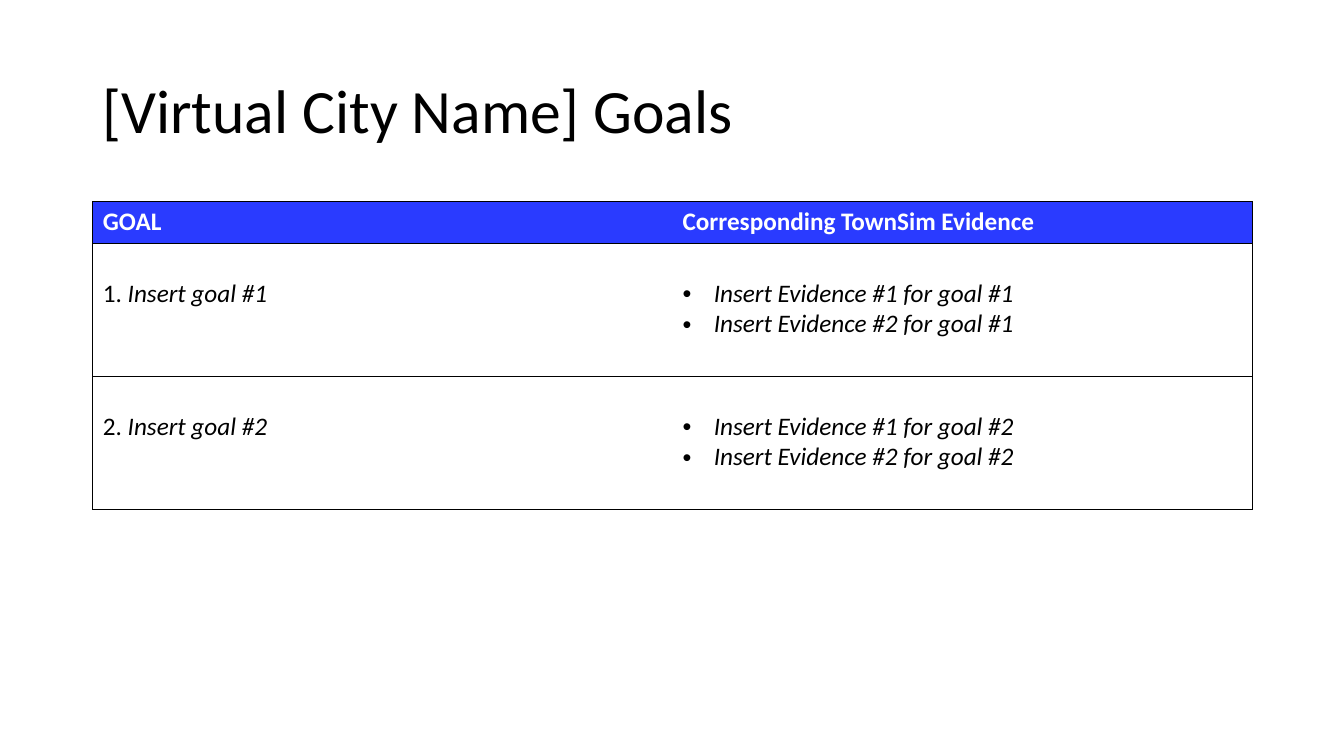
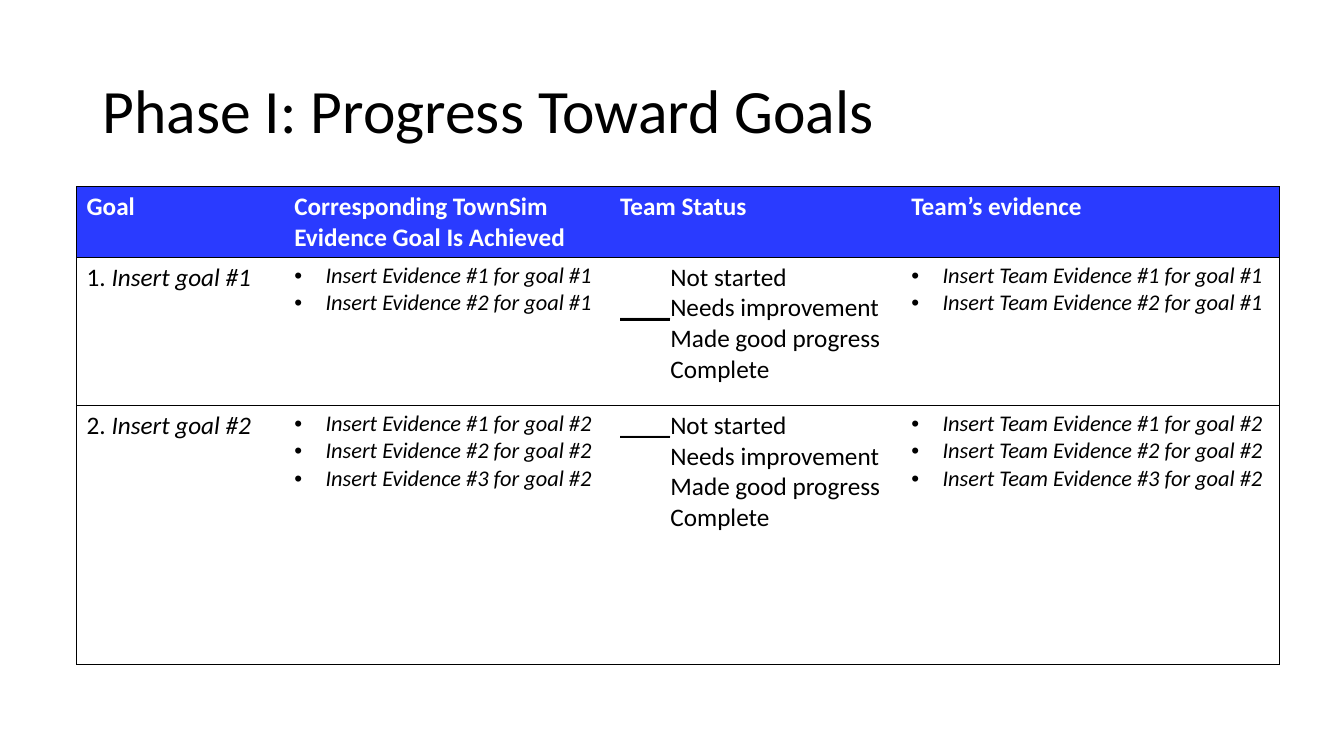
from dataclasses import dataclass

import lxml.etree
import pptx
import pptx.dml.color
import pptx.enum.text
import pptx.oxml.ns
import pptx.util

Inches = pptx.util.Inches
Pt = pptx.util.Pt
qn = pptx.oxml.ns.qn


@dataclass(frozen=True)
class Theme:
    font: str = "Calibri"
    ink: str = "000000"
    header_ink: str = "FFFFFF"
    header_fill: str = "2A3BFF"
    title_size: int = 44
    body_size: int = 18
    small_size: int = 16
    rule_width: float = 0.5
    bullet_indent: float = 0.31
    status_tab: float = 0.5


THEME = Theme()
STATUSES = ["Not started", "Needs improvement", "Made good progress", "Complete"]


def rgb(value):
    return pptx.dml.color.RGBColor.from_string(value)


def add_run(paragraph, text, *, size=THEME.body_size, color=THEME.ink,
            bold=False, italic=False, underline=False):
    run = paragraph.add_run()
    run.text = text
    font = run.font
    font.name, font.size, font.color.rgb = THEME.font, Pt(size), rgb(color)
    font.bold, font.italic, font.underline = bold, italic, underline


def paragraphs_for(frame, items):
    """Yield each item with its own paragraph, starting with the existing one."""
    for index, item in enumerate(items):
        yield (frame.add_paragraph() if index else frame.paragraphs[0]), item


def add_title(slide, text):
    box = slide.shapes.add_textbox(Inches(0.92), Inches(0.4), Inches(11.5), Inches(1.45))
    frame = box.text_frame
    frame.word_wrap = True
    frame.vertical_anchor = pptx.enum.text.MSO_ANCHOR.MIDDLE
    frame.paragraphs[0].line_spacing = 0.9
    add_run(frame.paragraphs[0], text, size=THEME.title_size)


def set_borders(cell, ruled_sides):
    """Rule the given sides (letters of LRTB) and clear the others."""
    properties = cell._tc.get_or_add_tcPr()
    for side in "LRTB":
        line = lxml.etree.SubElement(properties, qn(f"a:ln{side}"), w=str(Pt(THEME.rule_width)))
        if side in ruled_sides:
            fill = lxml.etree.SubElement(line, qn("a:solidFill"))
            lxml.etree.SubElement(fill, qn("a:srgbClr"), val=THEME.ink)
        else:
            lxml.etree.SubElement(line, qn("a:noFill"))


def add_goal_table(slide, left, top, widths, heights, headings):
    """Add a table with ruled rows, an outer frame and a coloured heading row."""
    frame = slide.shapes.add_table(len(heights), len(widths), Inches(left), Inches(top),
                                   Inches(sum(widths)), Inches(sum(heights)))
    table = frame.table
    table.horz_banding = False
    for column, width in zip(table.columns, widths):
        column.width = Inches(width)
    for row_number, (row, height) in enumerate(zip(table.rows, heights)):
        row.height = Inches(height)
        for column_number, cell in enumerate(row.cells):
            outer = "L" * (column_number == 0) + "R" * (column_number == len(widths) - 1)
            set_borders(cell, "TB" + outer)
            if row_number == 0:
                cell.fill.solid()
                cell.fill.fore_color.rgb = rgb(THEME.header_fill)
                add_run(cell.text_frame.paragraphs[0], headings[column_number],
                        color=THEME.header_ink, bold=True)
            else:
                cell.fill.background()
    return table


def write_goal(cell, number):
    paragraph = cell.text_frame.paragraphs[0]
    add_run(paragraph, f"{number}. ")
    add_run(paragraph, f"Insert goal #{number}", italic=True)


def write_evidence(cell, label, goal, count, size):
    for paragraph, number in paragraphs_for(cell.text_frame, range(1, count + 1)):
        properties = paragraph._p.get_or_add_pPr()
        indent = Inches(THEME.bullet_indent)
        properties.set("marL", str(indent))
        properties.set("indent", str(-indent))
        lxml.etree.SubElement(properties, qn("a:buFont"), typeface="Arial")
        lxml.etree.SubElement(properties, qn("a:buChar"), char="•")
        add_run(paragraph, f"Insert {label} #{number} for goal #{goal}", size=size, italic=True)


def write_status(cell, current):
    """List every status, with a drawn blank before the current one."""
    for paragraph, status in paragraphs_for(cell.text_frame, STATUSES):
        tabs = lxml.etree.SubElement(paragraph._p.get_or_add_pPr(), qn("a:tabLst"))
        lxml.etree.SubElement(tabs, qn("a:tab"), pos=str(Inches(THEME.status_tab)), algn="l")
        add_run(paragraph, "____" if status == current else "\t", underline=True)
        add_run(paragraph, status)


def build_goals(slide):
    add_title(slide, "[Virtual City Name] Goals")
    table = add_goal_table(slide, 0.92, 2, [5.75] * 2, [0.41, 1.32, 1.32],
                           ["GOAL", "Corresponding TownSim Evidence"])
    for goal in (1, 2):
        goal_cell, evidence_cell = table.rows[goal].cells
        for cell in (goal_cell, evidence_cell):
            cell.margin_top = Inches(0.35)
        write_goal(goal_cell, goal)
        write_evidence(evidence_cell, "Evidence", goal, 2, THEME.body_size)


def build_progress(slide):
    add_title(slide, "Phase I: Progress Toward Goals")
    table = add_goal_table(slide, 0.76, 1.85, [2.06, 3.23, 2.89, 3.75], [0.7, 1.47, 2.57],
                           ["Goal", "Corresponding TownSim Evidence Goal Is Achieved",
                            "Team Status", "Team’s evidence"])
    progress = [(1, 2, "Needs improvement"), (2, 3, "Not started")]
    for goal, evidence_count, status in progress:
        goal_cell, evidence_cell, status_cell, team_cell = table.rows[goal].cells
        write_goal(goal_cell, goal)
        write_evidence(evidence_cell, "Evidence", goal, evidence_count, THEME.small_size)
        write_status(status_cell, status)
        write_evidence(team_cell, "Team Evidence", goal, evidence_count, THEME.small_size)


def main():
    deck = pptx.Presentation()
    deck.slide_width, deck.slide_height = Inches(13.33), Inches(7.5)
    blank_layout = deck.slide_layouts[6]
    for build in (build_goals, build_progress):
        build(deck.slides.add_slide(blank_layout))
    deck.save("out.pptx")


if __name__ == "__main__":
    main()
